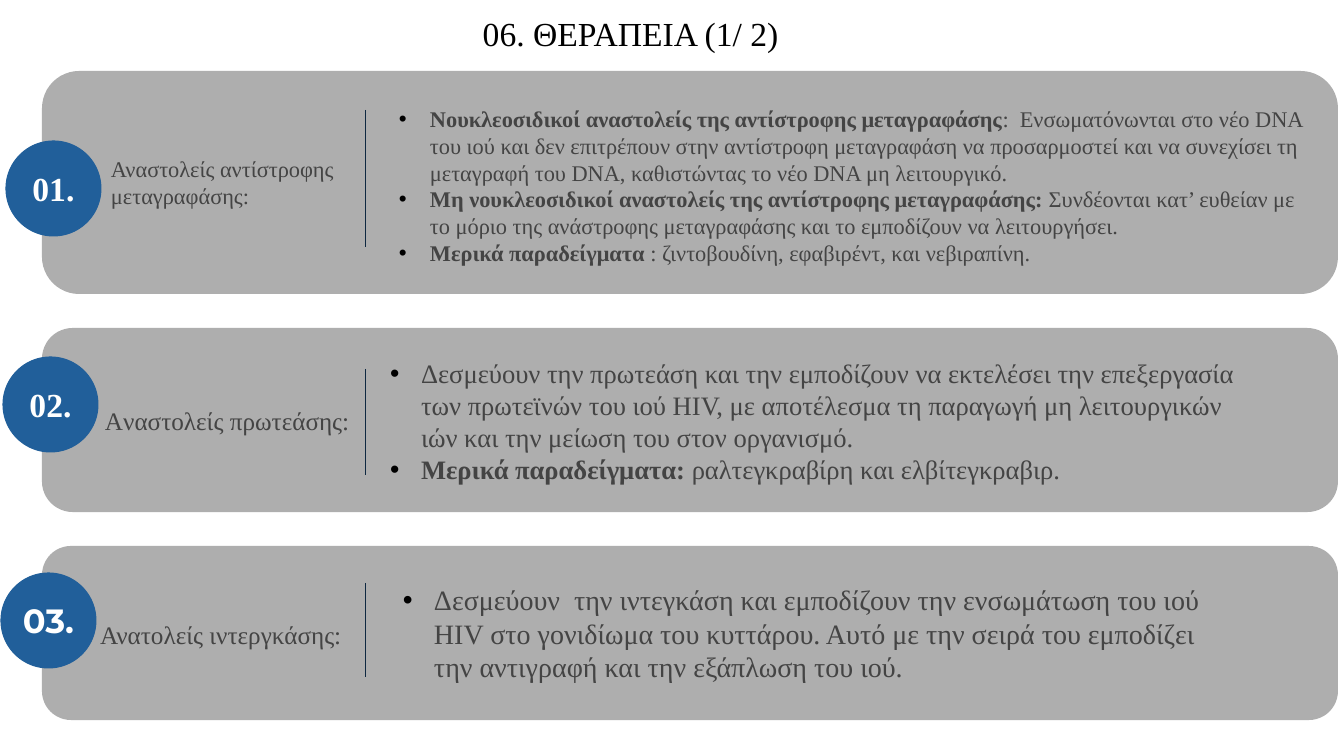
from dataclasses import dataclass
from lxml.etree import SubElement
from pptx import Presentation
from pptx.dml.color import RGBColor as RGB
from pptx.enum.shapes import MSO_CONNECTOR as CONN, MSO_SHAPE as SHAPE
from pptx.enum.text import MSO_ANCHOR as ANCHOR, PP_ALIGN as ALIGN
from pptx.oxml.ns import qn
from pptx.util import Emu, Pt


@dataclass(frozen=True)
class Theme:
    """Colours, fonts and type sizes of the slide."""
    panel: str = "AEAEAE"
    badge: str = "215F9A"
    rule: str = "0E2841"
    body: str = "444444"
    black: str = "000000"
    white: str = "FFFFFF"
    serif: str = "Times New Roman"
    sans: str = "Montserrat"
    heading: int = 24
    small: int = 16
    label: int = 18
    medium: int = 19
    large: int = 20


T = Theme()

SECTIONS = [
    dict(
        panel=(71, 223), badge=(6, 141), number="01.", badge_font=T.serif, rule=(110, 247),
        label=["Αναστολείς αντίστροφης", "μεταγραφάσης:"], label_size=T.small,
        label_box=(98, 137, 276, 125), label_inset=(13, 13, 13, 47), label_fill=None,
        bullet_box=(335, 101, 994, 169), bullet_size=T.small,
        bullets=[
            ("Νουκλεοσιδικοί αναστολείς της αντίστροφης μεταγραφάσης",
             ":  Ενσωματόνωνται στο νέο DNA του ιού και δεν επιτρέπουν στην αντίστροφη "
             "μεταγραφάση να προσαρμοστεί και να συνεχίσει τη μεταγραφή του DNA, "
             "καθιστώντας το νέο DNA μη λειτουργικό."),
            ("Μη νουκλεοσιδικοί αναστολείς της αντίστροφης μεταγραφάσης: ",
             "Συνδέονται κατ’ ευθείαν με το μόριο της ανάστροφης μεταγραφάσης "
             "και το εμποδίζουν να λειτουργήσει."),
            ("Μερικά παραδείγματα ", ": ζιντοβουδίνη, εφαβιρέντ, και νεβιραπίνη."),
        ],
    ),
    dict(
        panel=(328, 184), badge=(3, 357), number="02.", badge_font=T.serif, rule=(369, 475),
        label=["Aναστολείς πρωτεάσης:"], label_size=T.label,
        label_box=None, label_inset=(54, 7, 13, 7), label_fill=None,
        bullet_box=(326, 373, 934, 96), bullet_size=T.medium,
        bullets=[
            ("", "Δεσμεύουν την πρωτεάση και την εμποδίζουν να εκτελέσει την επεξεργασία "
             "των πρωτεϊνών του ιού HIV, με αποτέλεσμα τη παραγωγή μη λειτουργικών ιών "
             "και την μείωση του στον οργανισμό."),
            ("Μερικά παραδείγματα: ", "ραλτεγκραβίρη και ελβίτεγκραβιρ."),
        ],
    ),
    dict(
        panel=(546, 174), badge=(1, 573), number="03.", badge_font=T.sans, rule=(583, 677),
        label=["Ανατολείς ιντεργκάσης:"], label_size=T.label,
        label_box=(87, 582, 273, 104), label_inset=(13, 7, 13, 7), label_fill=T.panel,
        bullet_box=(339, 588, 897, 90), bullet_size=T.large,
        bullets=[
            ("", "Δεσμεύουν  την ιντεγκάση και εμποδίζουν την ενσωμάτωση του ιού HIV στο "
             "γονιδίωμα του κυττάρου. Αυτό με την σειρά του εμποδίζει την αντιγραφή "
             "και την εξάπλωση του ιού."),
        ],
    ),
]


def px(n):
    """Turn pixels into EMU."""
    return Emu(round(n * 12192000 / 1344))


def style(r, size, color=T.body, bold=False, font=T.serif):
    """Format one run."""
    r.font.size, r.font.bold, r.font.name = Pt(size), bold, font
    r.font.color.rgb = RGB.from_string(color)


def frame(sp, inset=(13, 13, 13, 13), wrap=True):
    """Set up the text frame of a shape and return it."""
    tf = sp.text_frame
    tf.word_wrap, tf.vertical_anchor = wrap, ANCHOR.MIDDLE
    tf.margin_left, tf.margin_top, tf.margin_right, tf.margin_bottom = map(px, inset)
    return tf


def add_block(s, kind, box, fill, line=None):
    """Add a filled preset shape."""
    sp = s.shapes.add_shape(kind, *map(px, box))
    sp.shadow.inherit = False
    sp.fill.solid()
    sp.fill.fore_color.rgb = RGB.from_string(fill)
    if line:
        sp.line.color.rgb = RGB.from_string(line)
        sp.line.width = Pt(0.75)
    else:
        sp.line.fill.background()
    return sp


def add_text(s, box):
    """Add an empty text box."""
    return s.shapes.add_textbox(*map(px, box))


def add_title(s, text):
    """Add the centred slide title."""
    p = frame(add_text(s, (25, -6, 1211, 83))).paragraphs[0]
    p.text, p.alignment, p.line_spacing = text, ALIGN.CENTER, 0.9
    style(p.runs[0], T.heading, T.black)


def add_badge(s, pos, number, font):
    """Add a round section number."""
    sp = add_block(s, SHAPE.OVAL, (*pos, 95, 95), T.badge, T.badge)
    p = frame(sp, (13, 7, 13, 7), wrap=False).paragraphs[0]
    p.text, p.alignment = number, ALIGN.CENTER
    style(p.runs[0], T.heading, T.white, True, font)


def add_rule(s, top, bottom):
    """Add the vertical line between label and bullets."""
    c = s.shapes.add_connector(CONN.STRAIGHT, px(366), px(top), px(366), px(bottom))
    c.line.color.rgb = RGB.from_string(T.rule)
    c.line.width = Pt(0.75)
    SubElement(c._element.spPr, qn("a:effectLst"))


def write_label(sp, lines, size, inset):
    """Write the section label into a shape."""
    tf = frame(sp, inset)
    tf.text = "\n".join(lines)
    for p in tf.paragraphs:
        p.alignment = ALIGN.LEFT
        style(p.runs[0], size)


def set_bullet(p):
    """Give a paragraph a black hanging bullet."""
    p.level = 1
    pPr = p._p.get_or_add_pPr()
    pPr.set("marL", str(px(82)))
    pPr.set("indent", str(px(-31)))
    SubElement(SubElement(pPr, qn("a:buClr")), qn("a:srgbClr")).set("val", T.black)
    SubElement(pPr, qn("a:buFont")).set("typeface", "Arial")
    SubElement(pPr, qn("a:buChar")).set("char", "•")


def add_bullets(s, box, items, size):
    """Add a bulleted list whose items may open in bold."""
    tf = frame(add_text(s, box))
    for i, (lead, rest) in enumerate(items):
        p = tf.add_paragraph() if i else tf.paragraphs[0]
        set_bullet(p)
        for text, bold in ((lead, True), (rest, False)):
            if text:
                r = p.add_run()
                r.text = text
                style(r, size, bold=bold)


def add_section(s, d):
    """Add one panel with its label, bullets, badge and rule."""
    top, height = d["panel"]
    sp = add_block(s, SHAPE.ROUNDED_RECTANGLE, (42, top, 1296, height), T.panel)
    if d["label_fill"]:
        sp = add_block(s, SHAPE.RECTANGLE, d["label_box"], d["label_fill"])
    elif d["label_box"]:
        sp = add_text(s, d["label_box"])
    write_label(sp, d["label"], d["label_size"], d["label_inset"])
    add_bullets(s, d["bullet_box"], d["bullets"], d["bullet_size"])
    add_badge(s, d["badge"], d["number"], d["badge_font"])
    add_rule(s, *d["rule"])


def main():
    """Build and save the slide."""
    prs = Presentation()
    prs.slide_width, prs.slide_height = px(1344), px(756)
    s = prs.slides.add_slide(prs.slide_layouts[6])
    add_title(s, "06. ΘΕΡΑΠΕΙΑ (1/ 2)")
    for d in SECTIONS:
        add_section(s, d)
    prs.save("out.pptx")


if __name__ == "__main__":
    main()
